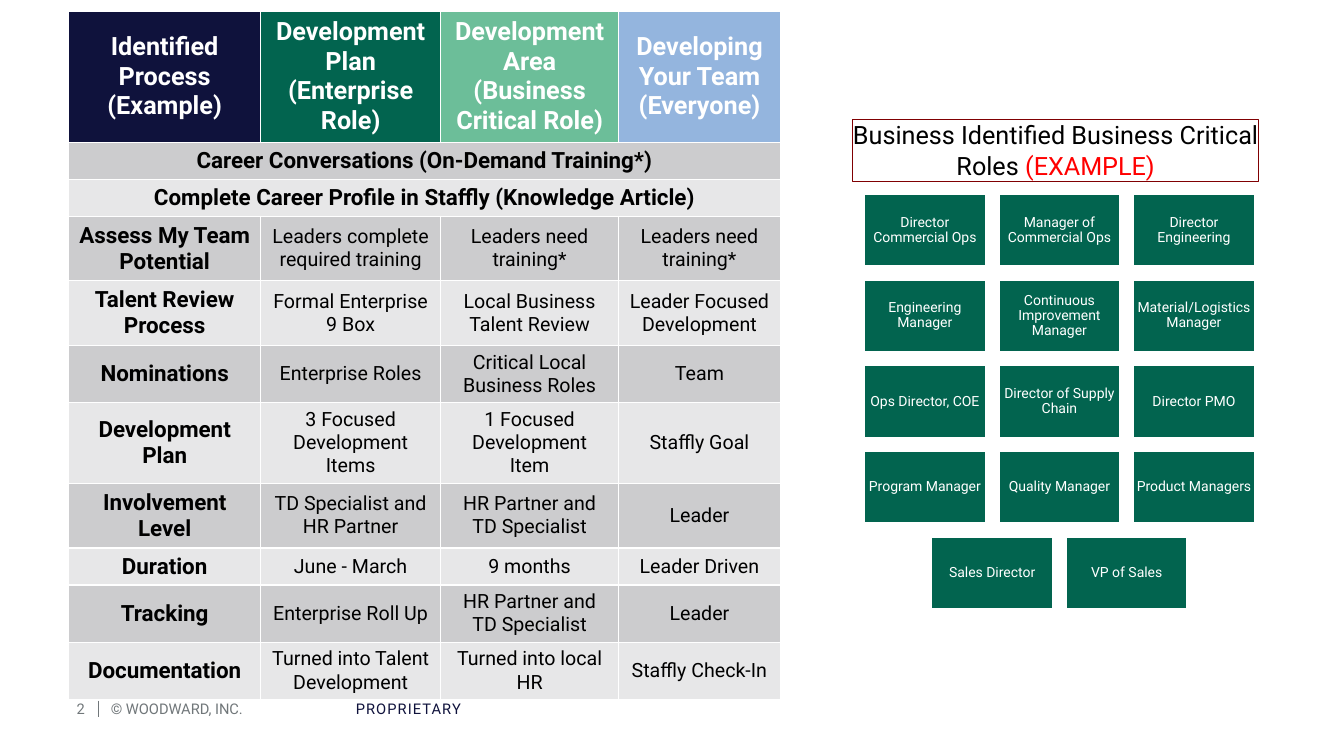
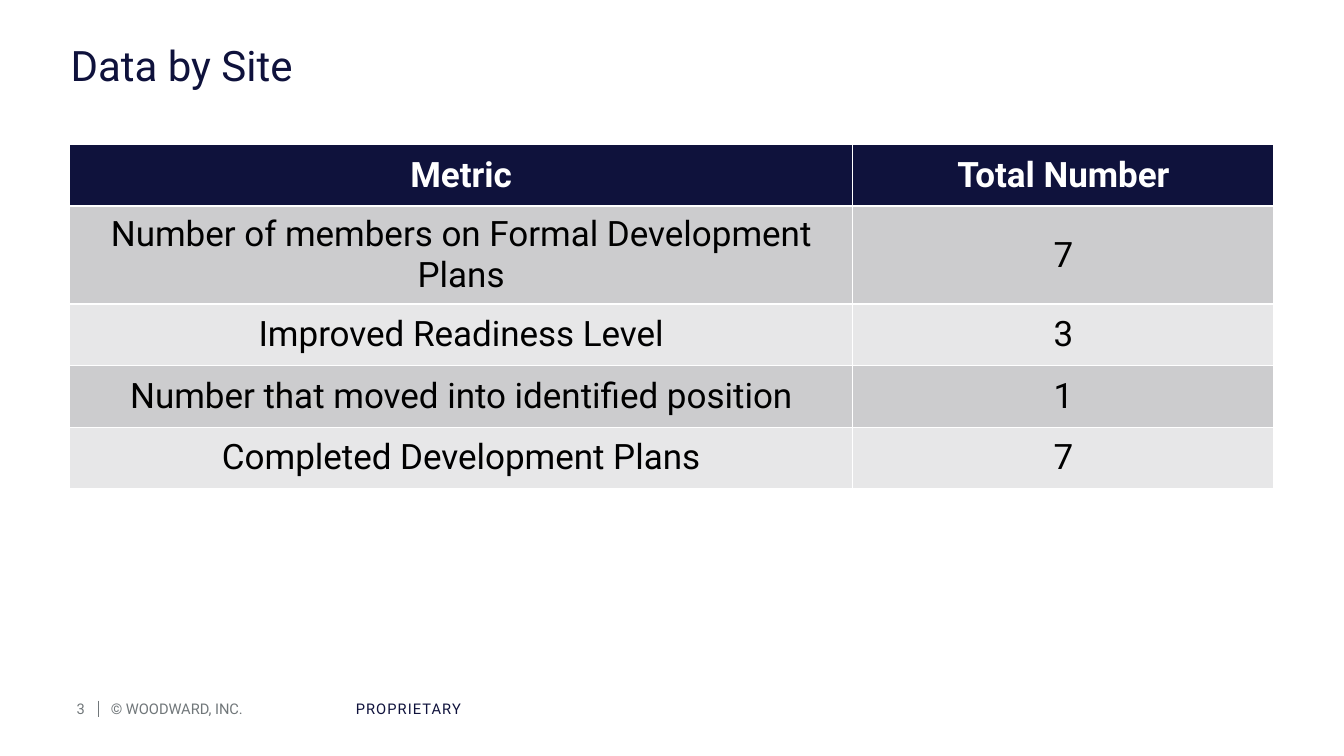
import pptx
import pptx.util
import pptx.dml.color
import pptx.enum.shapes
import pptx.enum.text
import lxml.etree

Pt = pptx.util.Pt
Align = pptx.enum.text.PP_ALIGN
Anchor = pptx.enum.text.MSO_ANCHOR
Shape = pptx.enum.shapes.MSO_SHAPE
FONT = "Roboto"
HEX = {
    "navy": "0F123C", "green": "02644F", "mint": "6CBE99", "sky": "94B5DE",
    "dark_band": "CCCCCE", "light_band": "E7E7E8", "footer": "71777A",
    "maroon": "800002", "red": "FF0000", "black": "000000", "white": "FFFFFF",
}
COLORS = {name: pptx.dml.color.RGBColor.from_string(code) for name, code in HEX.items()}


def write(holder, text, size=10, color="black", bold=False, align=Align.LEFT,
          anchor=Anchor.MIDDLE, insets=(0, 0), line_spacing=None, tracking=None):
    frame = holder.text_frame
    frame.word_wrap = True
    target = holder if hasattr(holder, "margin_left") else frame
    target.margin_left = target.margin_right = Pt(insets[0])
    target.margin_top = target.margin_bottom = Pt(insets[1])
    target.vertical_anchor = anchor
    for index, line in enumerate(text.split("\n")):
        para = frame.add_paragraph() if index else frame.paragraphs[0]
        para.alignment = align
        if line_spacing:
            para.line_spacing = line_spacing
        span = para.add_run()
        span.text = line
        span.font.name, span.font.size, span.font.bold = FONT, Pt(size), bold
        span.font.color.rgb = COLORS[color]
        if tracking:
            span.font._element.set("spc", str(tracking))
    return para


def add_grid(page, left, top, widths, heights, rows, header_fills, sizes,
             bold_labels=False, insets=(7.2, 3.6)):
    header_size, label_size, body_size = sizes
    grid = page.shapes.add_table(len(rows), len(widths), Pt(left), Pt(top),
                                 Pt(sum(widths)), Pt(sum(heights))).table
    grid.horz_banding = False
    for column, width in zip(grid.columns, widths):
        column.width = Pt(width)
    for number, (entries, height) in enumerate(zip(rows, heights)):
        grid.rows[number].height = Pt(height)
        band = "dark_band" if number % 2 else "light_band"
        if len(entries) == 1:
            grid.cell(number, 0).merge(grid.cell(number, len(widths) - 1))
        for position in range(len(widths)):
            cell = grid.cell(number, position)
            cell.fill.solid()
            cell.fill.fore_color.rgb = COLORS[header_fills[position] if number == 0 else band]
            if position < len(entries):
                size = header_size if number == 0 else body_size if position else label_size
                write(cell, entries[position], size=size, align=Align.CENTER, insets=insets,
                      color="black" if number else "white",
                      bold=number == 0 or (bold_labels and position == 0))


deck = pptx.Presentation()
deck.slide_width, deck.slide_height = Pt(960), Pt(540)

pages = []
for number in (2, 3):
    page = deck.slides.add_slide(deck.slide_layouts[6])
    pages.append(page)
    for left, width, text, color, align, tracking in (
        (15, 45.5, str(number), "footer", Align.RIGHT, None),
        (254.2, 324, "PROPRIETARY", "navy", Align.LEFT, 80),
        (79.2, 135.4, "© WOODWARD, INC.", "footer", Align.LEFT, None),
    ):
        box = page.shapes.add_textbox(Pt(left), Pt(499.7), Pt(width), Pt(13))
        write(box, text, size=10.5, color=color, align=align, tracking=tracking)
    divider = page.shapes.add_connector(pptx.enum.shapes.MSO_CONNECTOR.STRAIGHT,
                                        Pt(70), Pt(500.4), Pt(70), Pt(512))
    divider.line.color.rgb = COLORS["footer"]
    divider.line.width = Pt(0.5)
    lxml.etree.SubElement(divider._element.spPr, pptx.oxml.ns.qn("a:effectLst"))

process_page, data_page = pages

roles = (
    ("Director Commercial Ops", "Manager of Commercial Ops", "Director Engineering"),
    ("Engineering Manager", "Continuous Improvement Manager", "Material/Logistics Manager"),
    ("Ops Director, COE", "Director of Supply Chain", "Director PMO"),
    ("Program Manager", "Quality Manager", "Product Managers"),
    ("Sales Director", "VP of Sales"),
)
column_step, row_step = 96.1, 61.2
for row, names in enumerate(roles):
    row_left = 617 + (3 - len(names)) * column_step / 2
    for column, name in enumerate(names):
        tile = process_page.shapes.add_shape(
            Shape.RECTANGLE, Pt(row_left + column * column_step),
            Pt(138.2 + row * row_step), Pt(87.3), Pt(52.4))
        tile.shadow.inherit = False
        tile.fill.solid()
        tile.fill.fore_color.rgb = COLORS["green"]
        tile.line.color.rgb = COLORS["white"]
        tile.line.width = Pt(2)
        write(tile, name, color="white", align=Align.CENTER, insets=(2.8, 2.8), line_spacing=0.9)

caption = process_page.shapes.add_shape(Shape.RECTANGLE, Pt(609), Pt(85.5), Pt(290.2), Pt(44))
caption.shadow.inherit = False
caption.fill.background()
caption.line.color.rgb = COLORS["maroon"]
caption.line.width = Pt(0.75)
para = write(caption, "Business Identified Business Critical Roles ", size=18,
             align=Align.CENTER, anchor=Anchor.TOP)
span = para.add_run()
span.text = "(EXAMPLE)"
span.font.name, span.font.size = FONT, Pt(18)
span.font.color.rgb = COLORS["red"]

process_rows = (
    ("Identified Process\n(Example)", "Development Plan\n(Enterprise Role)",
     "Development Area\n(Business Critical Role)", "Developing Your Team\n(Everyone)"),
    ("Career Conversations (On-Demand Training*)",),
    ("Complete Career Profile in Staffly (Knowledge Article)",),
    ("Assess My Team Potential", "Leaders complete required training",
     "Leaders need training*", "Leaders need training*"),
    ("Talent Review Process", "Formal Enterprise 9 Box",
     "Local Business Talent Review", "Leader Focused Development"),
    ("Nominations", "Enterprise Roles", "Critical Local Business Roles", "Team"),
    ("Development Plan", "3 Focused Development Items",
     "1 Focused Development Item", "Staffly Goal"),
    ("Involvement Level", "TD Specialist and HR Partner",
     "HR Partner and TD Specialist", "Leader"),
    ("Duration", "June - March", "9 months", "Leader Driven"),
    ("Tracking", "Enterprise Roll Up", "HR Partner and TD Specialist", "Leader"),
    ("Documentation", "Turned into Talent Development",
     "Turned into local HR", "Staffly Check-In"),
)
add_grid(process_page, 49, 7.9, (137.3, 128.4, 127.3, 115.4),
         (93.2, 26.4, 26.4, 46.2, 46.2, 40.4, 57.3, 46.2, 26.4, 40.4, 40.4),
         process_rows, ("navy", "green", "mint", "sky"), (18, 16, 14), bold_labels=True)

title = data_page.shapes.add_textbox(Pt(50.4), Pt(32.4), Pt(860.4), Pt(65.5))
write(title, "Data by Site", size=30, color="navy", anchor=Anchor.TOP, line_spacing=0.9)

metric_rows = (
    ("Metric", "Total Number"),
    ("Number of members on Formal Development Plans", "7"),
    ("Improved Readiness Level", "3"),
    ("Number that moved into identified position", "1"),
    ("Completed Development Plans", "7"),
)
add_grid(data_page, 49.7, 103.2, (559.4, 301), (44, 68.6, 44, 44, 44), metric_rows,
         ("navy", "navy"), (25, 25, 25), insets=(10, 5))

deck.save("out.pptx")
